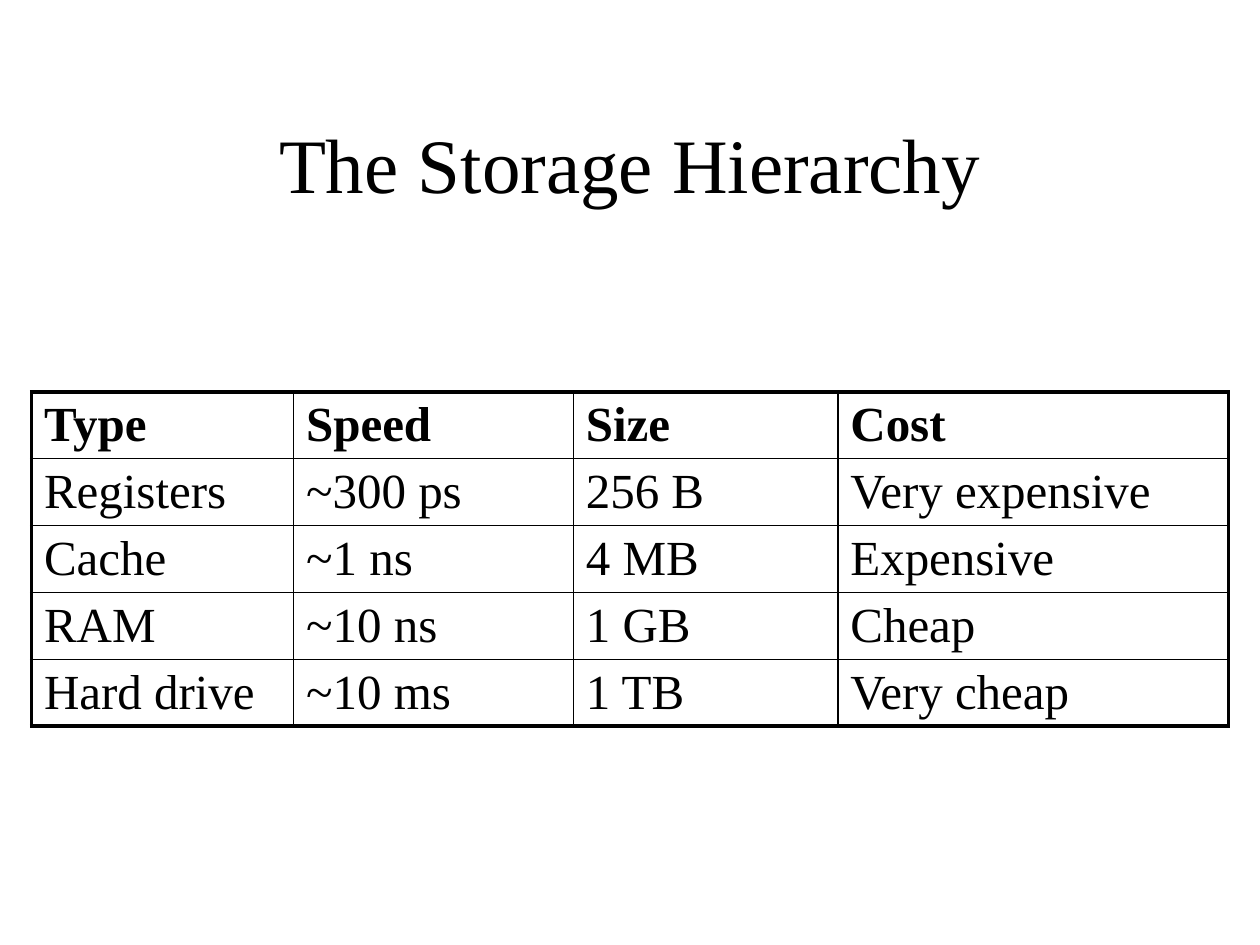
from dataclasses import dataclass

from lxml.etree import SubElement
from pptx import Presentation
from pptx.dml.color import RGBColor
from pptx.enum.text import MSO_ANCHOR as Anchor, PP_ALIGN as Align
from pptx.oxml.ns import qn
from pptx.slide import Slide
from pptx.table import Table, _Cell as Cell
from pptx.text.text import _Paragraph as Paragraph
from pptx.util import Inches, Pt

BLACK = RGBColor(0x00, 0x00, 0x00)
WHITE = RGBColor(0xFF, 0xFF, 0xFF)
FONT = "Times New Roman"
OUTER_LINE = Pt(2.25)
INNER_LINE = Pt(1)
ROW_HEIGHT = 0.53
COLUMN_WIDTHS = (2.08, 2.22, 2.1, 3.1)


@dataclass(frozen=True)
class Storage:
    type: str
    speed: str
    size: str
    cost: str

    def texts(self) -> tuple[str, ...]:
        return self.type, self.speed, self.size, self.cost


HIERARCHY = (
    Storage("Type", "Speed", "Size", "Cost"),
    Storage("Registers", "~300 ps", "256 B", "Very expensive"),
    Storage("Cache", "~1 ns", "4 MB", "Expensive"),
    Storage("RAM", "~10 ns", "1 GB", "Cheap"),
    Storage("Hard drive", "~10 ms", "1 TB", "Very cheap"),
)


def style_paragraph(para: Paragraph, size: int, bold: bool = False) -> None:
    para.font.name = FONT
    para.font.size = Pt(size)
    para.font.bold = bold
    para.font.color.rgb = BLACK


def add_title(page: Slide, text: str) -> None:
    title = page.shapes.title
    title.left, title.top = Inches(0.75), Inches(0.67)
    title.width, title.height = Inches(8.5), Inches(1.25)
    frame = title.text_frame
    frame.text = text
    frame.vertical_anchor = Anchor.MIDDLE
    para = frame.paragraphs[0]
    para.alignment = Align.CENTER
    style_paragraph(para, 44)


def set_borders(cell: Cell, outer_sides: dict[str, bool]) -> None:
    properties = cell._tc.get_or_add_tcPr()
    for side, is_outer in outer_sides.items():
        width = OUTER_LINE if is_outer else INNER_LINE
        line = SubElement(properties, qn(f"a:ln{side}"), w=str(width))
        fill = SubElement(line, qn("a:solidFill"))
        SubElement(fill, qn("a:srgbClr"), val=str(BLACK))


def fill_cell(table: Table, row: int, column: int, text: str) -> None:
    cell = table.cell(row, column)
    cell.text = text
    style_paragraph(cell.text_frame.paragraphs[0], 28, bold=row == 0)
    set_borders(cell, {
        "L": column == 0,
        "R": column == len(COLUMN_WIDTHS) - 1,
        "T": row == 0,
        "B": row == len(HIERARCHY) - 1,
    })
    cell.fill.background()


def add_storage_table(page: Slide) -> None:
    frame = page.shapes.add_table(
        len(HIERARCHY), len(COLUMN_WIDTHS), Inches(0.25), Inches(3.11),
        Inches(sum(COLUMN_WIDTHS)), Inches(ROW_HEIGHT * len(HIERARCHY)),
    )
    table = frame.table
    table.first_row = False
    table.horz_banding = False
    for column, width in zip(table.columns, COLUMN_WIDTHS):
        column.width = Inches(width)
    for row, storage in enumerate(HIERARCHY):
        table.rows[row].height = Inches(ROW_HEIGHT)
        for column, text in enumerate(storage.texts()):
            fill_cell(table, row, column, text)


def main() -> None:
    deck = Presentation()
    deck.slide_width, deck.slide_height = Inches(10), Inches(7.5)
    page = deck.slides.add_slide(deck.slide_layouts[5])
    page.background.fill.solid()
    page.background.fill.fore_color.rgb = WHITE
    add_title(page, "The Storage Hierarchy")
    add_storage_table(page)
    deck.save("out.pptx")


if __name__ == "__main__":
    main()
